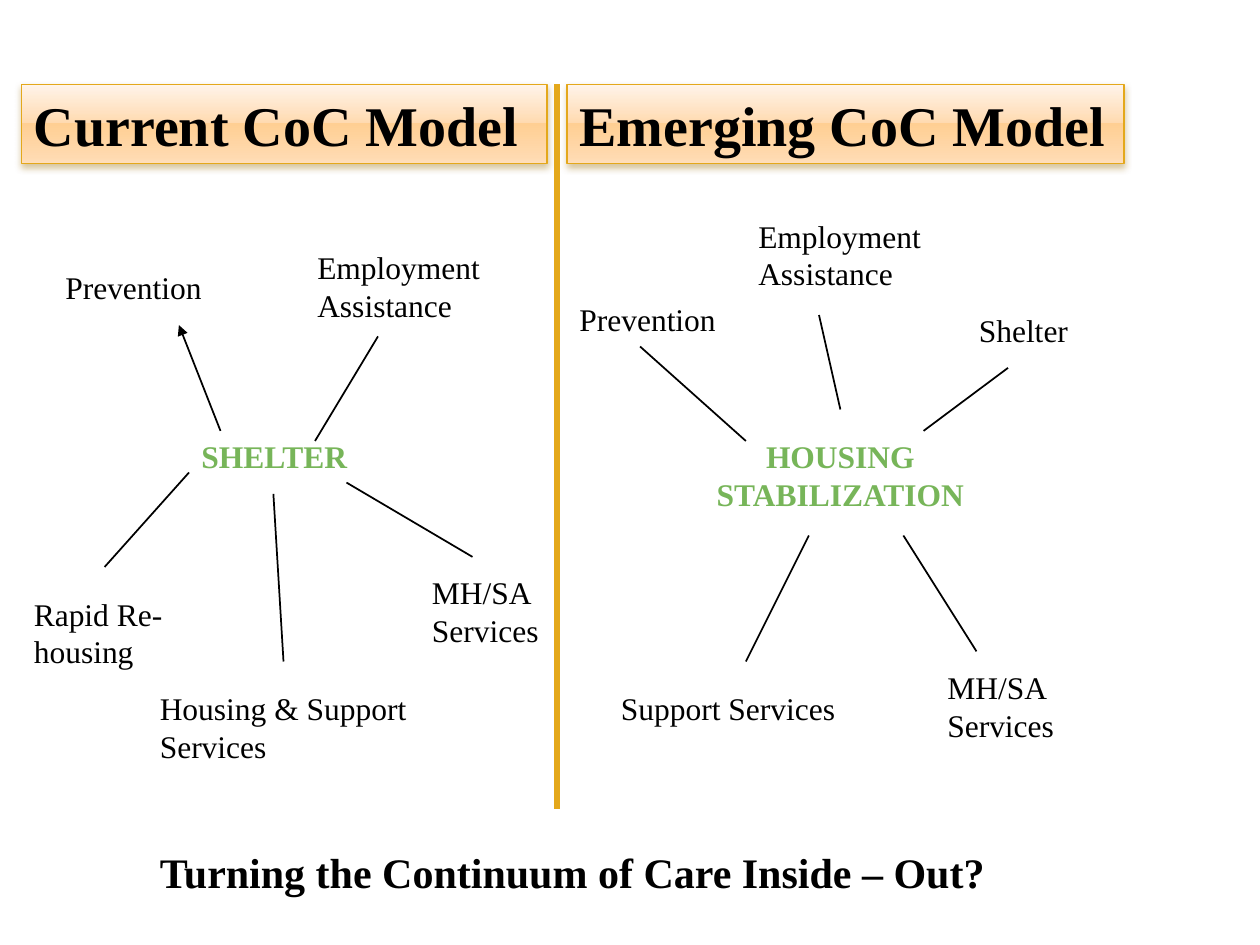
"""Build a slide comparing the current and emerging CoC models."""
from lxml import etree
from pptx import Presentation
from pptx.dml.color import RGBColor as RGB
from pptx.enum.shapes import MSO_CONNECTOR as LINK, MSO_SHAPE as SHAPE
from pptx.enum.text import MSO_ANCHOR as ANCHOR, PP_ALIGN as ALIGN
from pptx.oxml import parse_xml
from pptx.oxml.ns import nsdecls, qn
from pptx.util import Pt

PX = 9144
BLACK = RGB(0x00, 0x00, 0x00)
GREEN = RGB(0x77, 0xB5, 0x59)
GOLD = RGB(0xE4, 0xA8, 0x1B)
STOPS = [
    (0, RGB(0xFF, 0xF4, 0xEA)),
    (49, RGB(0xFF, 0xDA, 0xB0)),
    (49, RGB(0xFF, 0xCF, 0x93)),
    (92, RGB(0xFF, 0xDA, 0xB0)),
    (100, RGB(0xFF, 0xE0, 0xBD)),
]

deck = Presentation()
deck.slide_width, deck.slide_height = 1000 * PX, 750 * PX
slide = deck.slides.add_slide(deck.slide_layouts[6])
shapes = slide.shapes


def write(shape, text, size=18, color=BLACK, bold=False, align=ALIGN.LEFT):
    frame = shape.text_frame
    frame.word_wrap = True
    frame.vertical_anchor = ANCHOR.TOP
    frame.text = text
    para = frame.paragraphs[0]
    para.alignment = align
    font = para.runs[0].font
    font.name, font.size, font.bold = "Times New Roman", Pt(size), bold
    font.color.rgb = color


def link(ends, color=BLACK, width=1):
    line = shapes.add_connector(LINK.STRAIGHT, *[n * PX for n in ends])
    line.line.color.rgb = color
    line.line.width = Pt(width)
    etree.SubElement(line._element.spPr, qn("a:effectLst"))
    return line


labels = [
    ("Prevention", 42, 208, 175, 40),
    ("Employment Assistance", 242, 192, 150, 71),
    ("Rapid Re-housing", 17, 467, 175, 71),
    ("Housing & Support Services", 117, 542, 250, 71),
    ("MH/SA Services", 333, 450, 135, 71),
    ("Prevention", 450, 233, 175, 40),
    ("Employment Assistance", 592, 167, 200, 71),
    ("Shelter", 767, 242, 125, 40),
    ("Support Services", 483, 542, 208, 40),
    ("MH/SA Services", 742, 525, 175, 71),
]
for text, *area in labels:
    write(shapes.add_textbox(*[n * PX for n in area]), text)

hubs = [
    ("SHELTER", ALIGN.LEFT, 150, 342, 183, 40),
    ("HOUSING STABILIZATION", ALIGN.CENTER, 517, 342, 300, 71),
]
for text, align, *area in hubs:
    box = shapes.add_textbox(*[n * PX for n in area])
    write(box, text, color=GREEN, bold=True, align=align)

arrow = link((175, 342, 142, 258))
etree.SubElement(arrow.line._get_or_add_ln(), qn("a:tailEnd"), type="triangle")

spokes = [
    (250, 350, 300, 267),
    (150, 375, 83, 450),
    (217, 392, 225, 525),
    (275, 383, 375, 442),
    (592, 350, 508, 275),
    (667, 325, 650, 250),
    (733, 342, 800, 292),
    (642, 425, 592, 525),
    (717, 425, 775, 517),
]
for ends in spokes:
    link(ends)

heads = [("Current CoC Model", 17, 417), ("Emerging CoC Model", 450, 442)]
for text, left, width in heads:
    head = shapes.add_shape(SHAPE.RECTANGLE, left * PX, 67 * PX, width * PX, 63 * PX)
    head.shadow.inherit = False
    head.line.color.rgb = GOLD
    head.line.width = Pt(0.9)
    head.fill.gradient()
    head.fill.gradient_angle = 270
    ramp = head._element.spPr.find(qn("a:gradFill")).find(qn("a:gsLst"))
    ramp.clear()
    for spot, tint in STOPS:
        stop = etree.SubElement(ramp, qn("a:gs"), pos=str(spot * 1000))
        etree.SubElement(stop, qn("a:srgbClr"), val=str(tint))
    head._element.spPr.find(qn("a:effectLst")).append(parse_xml(
        f'<a:outerShdw {nsdecls("a")} blurRad="50800" dist="25400" dir="5400000" '
        'rotWithShape="0"><a:srgbClr val="976A00"><a:alpha val="38000"/>'
        '</a:srgbClr></a:outerShdw>'))
    write(head, text, size=32, bold=True)

link((442, 67, 442, 642), GOLD, 3)
foot = shapes.add_textbox(117 * PX, 667 * PX, 724 * PX, 51 * PX)
write(foot, "Turning the Continuum of Care Inside – Out?", size=24, bold=True)

deck.save("out.pptx")
